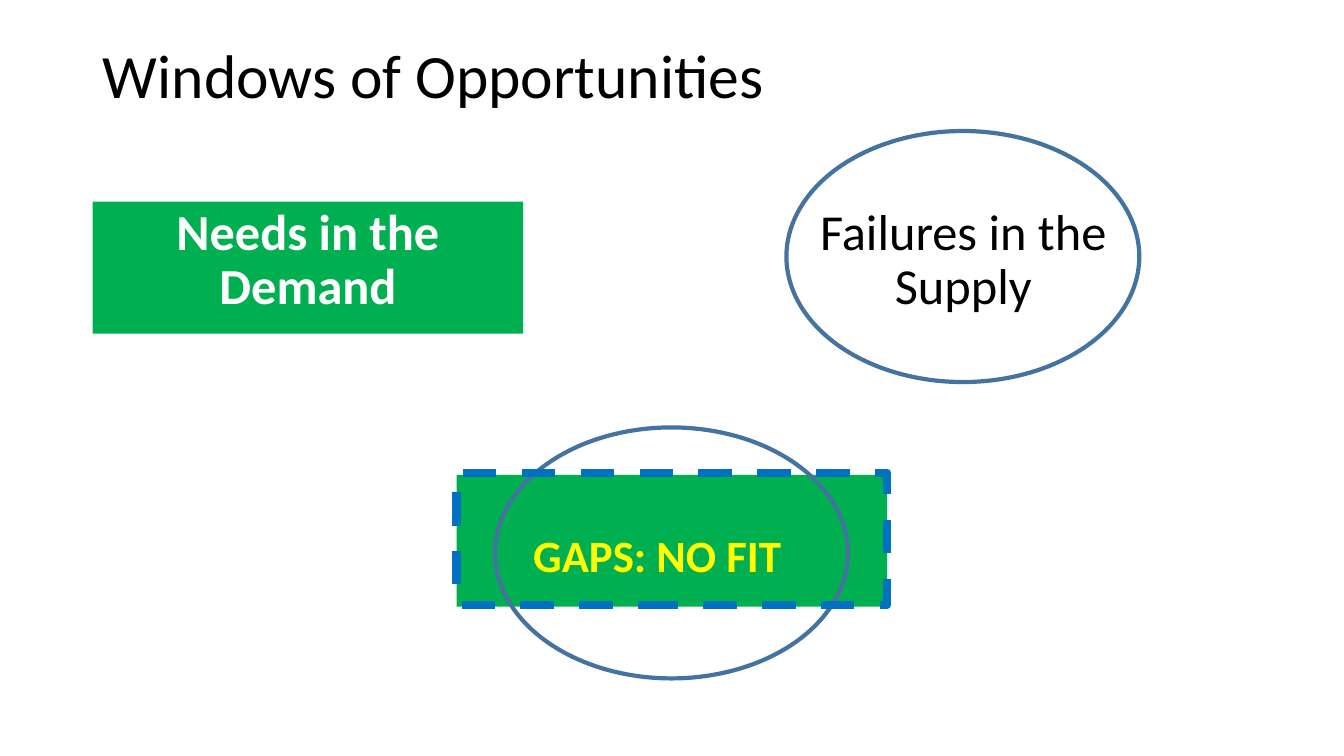
"""Build the Windows of Opportunities slide."""
from pptx import Presentation
from pptx import util as u
from pptx.dml.color import RGBColor
from pptx.enum import dml, shapes, text


class Theme:
    """Hold the colours, font and type sizes."""
    font = "Calibri"
    black, white, yellow = "000000", "FFFFFF", "FFFF00"
    green, steel, blue = "00B050", "43739E", "0070C0"
    title, label, gap = 44, 36, 32


class Deck:
    """Draw styled elements on the current slide."""

    def __init__(self, theme):
        """Start a wide deck with one title-only slide."""
        self.theme = theme
        self.deck = Presentation()
        self.deck.slide_width = u.Inches(13.33)
        self.deck.slide_height = u.Inches(7.5)
        self.slide = self.deck.slides.add_slide(self.deck.slide_layouts[5])

    def words(self, shape, words, size, color, bold=False,
              align=text.PP_ALIGN.LEFT, space=0.9):
        """Put formatted words at the top of a shape."""
        frame = shape.text_frame
        frame.text = words
        form = {"word_wrap": True, "auto_size": text.MSO_AUTO_SIZE.NONE,
                "vertical_anchor": text.MSO_ANCHOR.TOP}
        for key, value in form.items():
            setattr(frame, key, value)
        para = frame.paragraphs[0]
        para.alignment, para.line_spacing = align, space
        font = para.runs[0].font
        form = {"name": self.theme.font, "size": u.Pt(size), "bold": bold}
        for key, value in form.items():
            setattr(font, key, value)
        font.color.rgb = RGBColor.from_string(color)

    def title(self, words, box):
        """Place and fill the title."""
        shape = self.slide.shapes.title
        for key, value in zip(("left", "top", "width", "height"), box):
            setattr(shape, key, u.Inches(value))
        self.words(shape, words, self.theme.title, self.theme.black)

    def label(self, words, box, **form):
        """Add a text box."""
        shape = self.slide.shapes.add_textbox(*map(u.Inches, box))
        self.words(shape, words, **form)

    def shape(self, kind, box, fill=None, line=None, width=3, dash=None):
        """Add a preset shape with an optional fill and outline."""
        shape = self.slide.shapes.add_shape(kind, *map(u.Inches, box))
        shape.shadow.inherit = False
        for part, color in ((shape.fill, fill), (shape.line.fill, line)):
            if color:
                part.solid()
                part.fore_color.rgb = RGBColor.from_string(color)
            else:
                part.background()
        if line:
            shape.line.width = u.Pt(width)
            shape.line.dash_style = dash
        return shape


def main():
    """Draw the slide and save it."""
    look = Theme()
    page = Deck(look)
    rect, oval = shapes.MSO_SHAPE.RECTANGLE, shapes.MSO_SHAPE.OVAL
    mid = text.PP_ALIGN.CENTER
    block, ring = (4.27, 1.31), (3.5, 2.49)

    page.title("Windows of Opportunities", (0.92, 0.4, 11.5, 1.45))
    need = page.shape(rect, (0.92, 2, *block), fill=look.green)
    page.words(need, "Needs in the Demand", look.label, look.white,
               bold=True, align=mid)
    page.label("Failures in the Supply", (7.42, 2, *block),
               size=look.label, color=look.black, align=mid)
    page.shape(oval, (7.8, 1.3, *ring), line=look.steel)

    page.shape(rect, (4.53, 4.71, *block), fill=look.green)
    page.shape(oval, (4.91, 4.24, *ring), line=look.steel)
    page.label("GAPS: NO FIT", (5.19, 5.19, 2.95, 0.64), size=look.gap,
               color=look.yellow, bold=True, space=1.0)
    page.shape(rect, (4.53, 4.69, *block), line=look.blue, width=6,
               dash=dml.MSO_LINE.DASH)
    page.deck.save("out.pptx")


if __name__ == "__main__":
    main()
